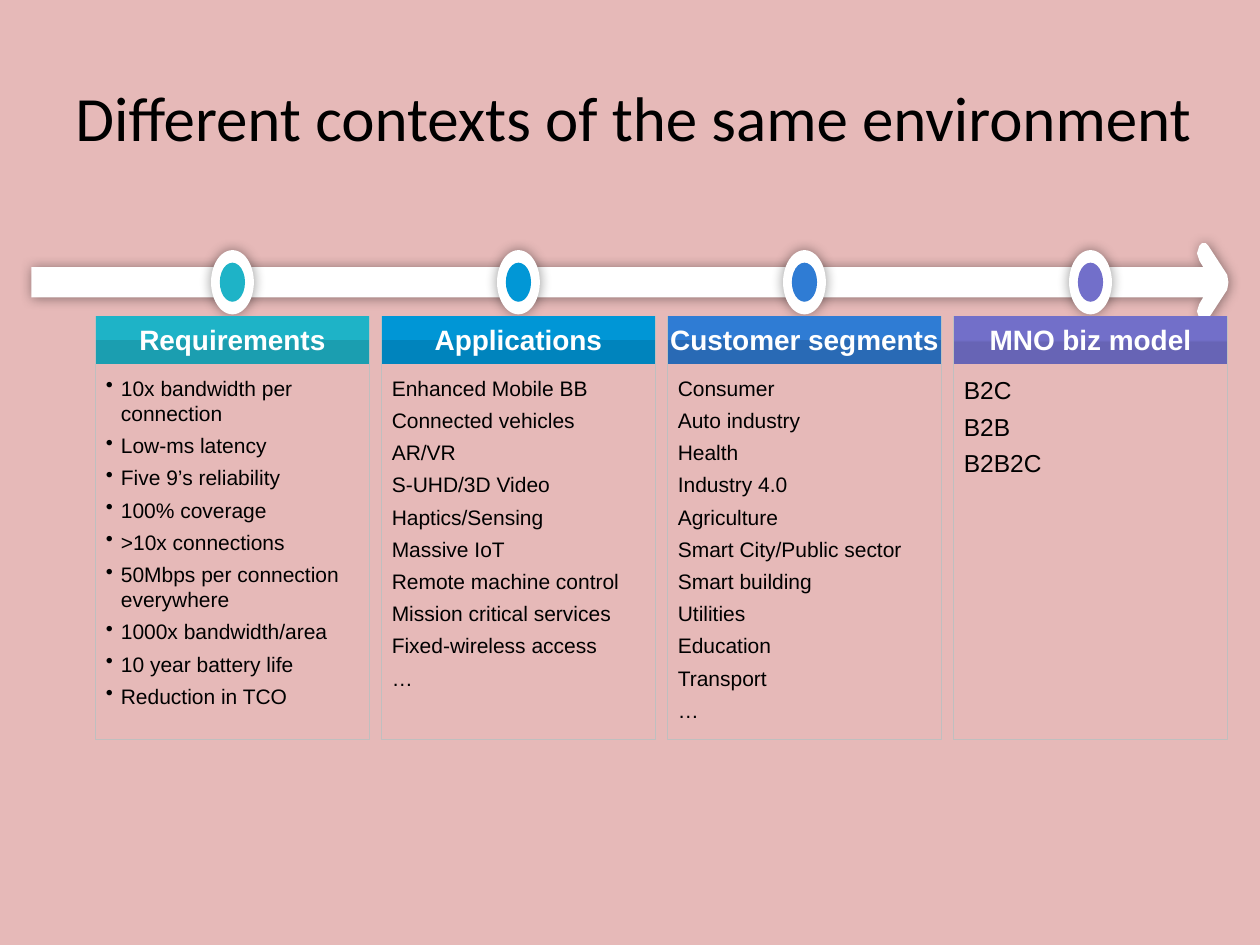
from dataclasses import dataclass

from lxml import etree
from pptx import Presentation
from pptx.dml.color import RGBColor
from pptx.enum import shapes, text
from pptx.oxml import ns
from pptx.util import Inches, Pt


@dataclass(frozen=True)
class Theme:
    background: str = "E6B9B8"
    white: str = "FFFFFF"
    ink: str = "000000"
    border: str = "BFBFBF"
    title_font: str = "Calibri"
    body_font: str = "Arial"
    title_size: int = 36
    header_size: int = 16
    item_size: int = 12
    large_item_size: int = 14


THEME = Theme()


@dataclass(frozen=True)
class Column:
    heading: str
    marker: str
    top_color: str
    bottom_color: str
    items: tuple[str, ...]
    item_size: int = THEME.item_size
    bulleted: bool = False
    split: float = 0.5


COLUMNS = (
    Column("Requirements", "1EB3C7", "1EB3C7", "1B9EB0", (
        "10x bandwidth per connection", "Low-ms latency", "Five 9’s reliability",
        "100% coverage", ">10x connections", "50Mbps per connection everywhere",
        "1000x bandwidth/area", "10 year battery life", "Reduction in TCO",
    ), bulleted=True),
    Column("Applications", "0197D6", "0096D6", "0084BD", (
        "Enhanced Mobile BB", "Connected vehicles", "AR/VR", "S-UHD/3D Video",
        "Haptics/Sensing", "Massive IoT", "Remote machine control",
        "Mission critical services", "Fixed-wireless access", "…",
    )),
    Column("Customer segments", "2F7CD4", "2F7CD4", "296AB5", (
        "Consumer", "Auto industry", "Health", "Industry 4.0", "Agriculture",
        "Smart City/Public sector", "Smart building", "Utilities", "Education",
        "Transport", "…",
    )),
    Column("MNO biz model", "726FCA", "726FC9", "6764B5", ("B2C", "B2B", "B2B2C"),
           item_size=THEME.large_item_size, split=0.55),
)

FIRST_LEFT, PITCH, CARD_WIDTH = 0.76, 2.27, 2.17
CARD_TOP, CARD_HEIGHT, HEADER_HEIGHT = 2.51, 3.36, 0.38
AXIS = 2.24

# Lower half of the arrow, as offsets from the axis; the upper half mirrors it.
ARROW_HALF = ((0.25, 0.12), (9.55, 0.12), (9.52, 0.17), (9.5, 0.23), (9.52, 0.29),
              (9.54, 0.31), (9.57, 0.31), (9.59, 0.29), (9.74, 0.06), (9.75, 0))


def color(value: str) -> RGBColor:
    return RGBColor.from_string(value)


def set_font(font, name: str, size: int, value: str, bold: bool = False) -> None:
    font.name, font.size, font.bold = name, Pt(size), bold
    font.color.rgb = color(value)


def set_insets(frame, left: float, top: float, right: float, bottom: float) -> None:
    frame.margin_left, frame.margin_top = Inches(left), Inches(top)
    frame.margin_right, frame.margin_bottom = Inches(right), Inches(bottom)


def paint(shape, fill: str) -> None:
    """Give a flat fill with neither outline nor shadow."""
    shape.shadow.inherit = False
    shape.fill.solid()
    shape.fill.fore_color.rgb = color(fill)
    shape.line.fill.background()


def add_glow_shadow(shape) -> None:
    effects = shape._element.spPr.find(ns.qn("a:effectLst"))
    shadow = etree.SubElement(effects, ns.qn("a:outerShdw"), blurRad=str(Pt(7)),
                              dist="0", algn="ctr", rotWithShape="0")
    tone = etree.SubElement(shadow, ns.qn("a:srgbClr"), val=THEME.ink)
    etree.SubElement(tone, ns.qn("a:alpha"), val="40000")


def add_bullet(paragraph) -> None:
    properties = paragraph._p.get_or_add_pPr()
    properties.set("marL", str(Inches(0.12)))
    properties.set("indent", str(-Inches(0.12)))
    etree.SubElement(properties, ns.qn("a:buChar"), char="•")


def add_title(slide, wording: str) -> None:
    frame = slide.shapes.add_textbox(
        Inches(0.5), Inches(0.3), Inches(9.34), Inches(1.25)).text_frame
    frame.word_wrap = True
    frame.vertical_anchor = text.MSO_ANCHOR.MIDDLE
    frame.text = wording
    set_font(frame.paragraphs[0].font, THEME.title_font, THEME.title_size, THEME.ink)


def add_arrow(slide) -> None:
    lower = [(x, AXIS + offset) for x, offset in ARROW_HALF]
    upper = [(x, AXIS - offset) for x, offset in reversed(ARROW_HALF[:-1])]
    points = [(Inches(x), Inches(y)) for x, y in lower + upper]
    builder = slide.shapes.build_freeform(*points[0])
    builder.add_line_segments(points[1:], close=True)
    arrow = builder.convert_to_shape()
    paint(arrow, THEME.white)
    add_glow_shadow(arrow)


def add_oval(slide, center: float, width: float, height: float, fill: str):
    oval = slide.shapes.add_shape(
        shapes.MSO_SHAPE.OVAL, Inches(center - width / 2), Inches(AXIS - height / 2),
        Inches(width), Inches(height))
    paint(oval, fill)
    return oval


def add_marker(slide, center: float, fill: str) -> None:
    add_glow_shadow(add_oval(slide, center, 0.34, 0.51, THEME.white))
    add_oval(slide, center, 0.2, 0.31, fill)


def add_card_frame(slide, left: float) -> None:
    card = slide.shapes.add_shape(
        shapes.MSO_SHAPE.RECTANGLE, Inches(left), Inches(CARD_TOP),
        Inches(CARD_WIDTH), Inches(CARD_HEIGHT))
    card.shadow.inherit = False
    card.fill.background()
    card.line.color.rgb = color(THEME.border)
    card.line.width = Pt(0.5)


def add_header(slide, left: float, column: Column) -> None:
    header = slide.shapes.add_shape(
        shapes.MSO_SHAPE.RECTANGLE, Inches(left), Inches(CARD_TOP),
        Inches(CARD_WIDTH), Inches(HEADER_HEIGHT))
    header.shadow.inherit = False
    header.line.fill.background()
    header.fill.gradient()
    header.fill.gradient_angle = 270
    stops = ((0.49, column.top_color), (column.split, column.bottom_color))
    for stop, (position, value) in zip(header.fill.gradient_stops, stops):
        stop.position = position
        stop.color.rgb = color(value)
    frame = header.text_frame
    set_insets(frame, 0, 0, 0, 0.02)
    frame.vertical_anchor = text.MSO_ANCHOR.MIDDLE
    frame.text = column.heading
    paragraph = frame.paragraphs[0]
    paragraph.alignment = text.PP_ALIGN.CENTER
    set_font(paragraph.font, THEME.body_font, THEME.header_size, THEME.white, bold=True)


def add_items(slide, left: float, column: Column) -> None:
    frame = slide.shapes.add_textbox(
        Inches(left), Inches(2.93), Inches(CARD_WIDTH), Inches(2.9)).text_frame
    frame.word_wrap = True
    set_insets(frame, 0.08, 0.05, 0.1, 0.05)
    frame.text = "\n".join(column.items)
    for paragraph in frame.paragraphs:
        if column.bulleted:
            add_bullet(paragraph)
        paragraph.space_after = Pt(4)
        set_font(paragraph.font, THEME.body_font, column.item_size, THEME.ink)


def main() -> None:
    presentation = Presentation()
    presentation.slide_width, presentation.slide_height = Inches(10), Inches(7.5)
    slide = presentation.slides.add_slide(presentation.slide_layouts[6])
    slide.background.fill.solid()
    slide.background.fill.fore_color.rgb = color(THEME.background)

    add_title(slide, "Different contexts of the same environment")
    add_arrow(slide)
    for index, column in enumerate(COLUMNS):
        left = FIRST_LEFT + index * PITCH
        add_marker(slide, left + CARD_WIDTH / 2, column.marker)
        add_card_frame(slide, left)
        add_header(slide, left, column)
        add_items(slide, left, column)
    presentation.save("out.pptx")


if __name__ == "__main__":
    main()
